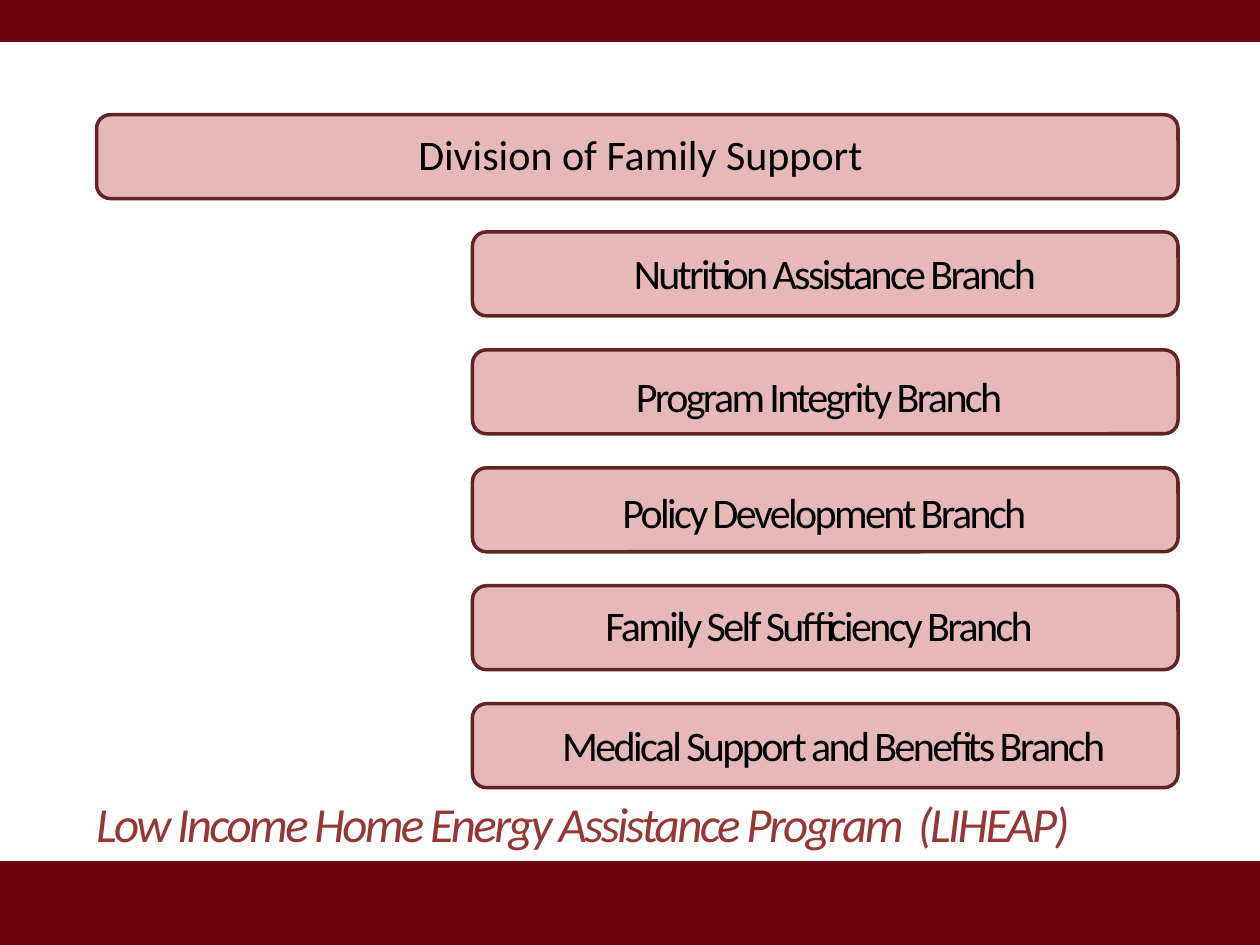
from dataclasses import dataclass

from pptx import Presentation
from pptx.dml.color import RGBColor
from pptx.enum.shapes import MSO_SHAPE as Shape
from pptx.enum.text import MSO_ANCHOR as Anchor, PP_ALIGN as Align
from pptx.util import Pt


@dataclass(frozen=True)
class Theme:
    font: str = "Calibri"
    band: RGBColor = RGBColor(0x6E, 0x06, 0x10)
    bar: RGBColor = RGBColor(0xE6, 0xB9, 0xB8)
    border: RGBColor = RGBColor(0x63, 0x25, 0x23)
    text: RGBColor = RGBColor(0, 0, 0)
    accent: RGBColor = RGBColor(0x95, 0x37, 0x35)
    label_size: int = 24
    program_size: int = 28
    tight: float = -1.5


THEME = Theme()
SLIDE_WIDTH, SLIDE_HEIGHT = 720, 540
BAR_HEIGHT = 48
BRANCH_LEFT, BRANCH_TOP, BRANCH_WIDTH = 270, 132.5, 403.2
BRANCH_STEP = 67.4

# Branch name, then left, top and width of its label
BRANCHES = [
    ("Nutrition Assistance Branch", 234, 138.2, 486),
    ("Program Integrity Branch", 234, 208.1, 468),
    ("Policy Development Branch", 168, 274.3, 606),
    ("Family Self Sufficiency Branch", 248.4, 339.1, 439.2),
    ("Medical Support and Benefits Branch", 270, 407.5, 412.6),
]


def add_band(slide, top, height):
    band = slide.shapes.add_shape(
        Shape.RECTANGLE, 0, Pt(top), Pt(SLIDE_WIDTH), Pt(height))
    band.shadow.inherit = False
    band.fill.solid()
    band.fill.fore_color.rgb = THEME.band
    band.line.fill.background()


def add_bar(slide, left, top, width):
    bar = slide.shapes.add_shape(
        Shape.ROUNDED_RECTANGLE, Pt(left), Pt(top), Pt(width), Pt(BAR_HEIGHT))
    bar.shadow.inherit = False
    bar.fill.solid()
    bar.fill.fore_color.rgb = THEME.bar
    bar.line.color.rgb = THEME.border
    bar.line.width = Pt(2)


def add_label(slide, wording, left, top, width, height=36, size=THEME.label_size,
              color=THEME.text, spacing=0, italic=False):
    """Add one centred line; spacing is the letter spacing in points."""
    frame = slide.shapes.add_textbox(
        Pt(left), Pt(top), Pt(width), Pt(height)).text_frame
    frame.word_wrap = True
    frame.vertical_anchor = Anchor.TOP
    line = frame.paragraphs[0]
    line.alignment = Align.CENTER
    run = line.add_run()
    run.text = wording
    run.font.name = THEME.font
    run.font.size = Pt(size)
    run.font.italic = italic
    run.font.color.rgb = color
    if spacing:
        run._r.get_or_add_rPr().set("spc", str(round(spacing * 100)))


def main():
    deck = Presentation()
    deck.slide_width, deck.slide_height = Pt(SLIDE_WIDTH), Pt(SLIDE_HEIGHT)
    slide = deck.slides.add_slide(deck.slide_layouts[6])

    add_band(slide, 0, 24)
    add_band(slide, 492, 48)
    add_label(slide, "Low Income Home Energy Assistance Program  (LIHEAP)",
              0, 450, 666, 42, THEME.program_size, THEME.accent,
              THEME.tight, italic=True)

    add_bar(slide, 55.2, 65.5, 618)
    add_label(slide, "Division of Family Support", 90, 70, 552)

    for row, (name, left, top, width) in enumerate(BRANCHES):
        add_bar(slide, BRANCH_LEFT, BRANCH_TOP + row * BRANCH_STEP, BRANCH_WIDTH)
        add_label(slide, name, left, top, width, spacing=THEME.tight)

    deck.save("out.pptx")


if __name__ == "__main__":
    main()
